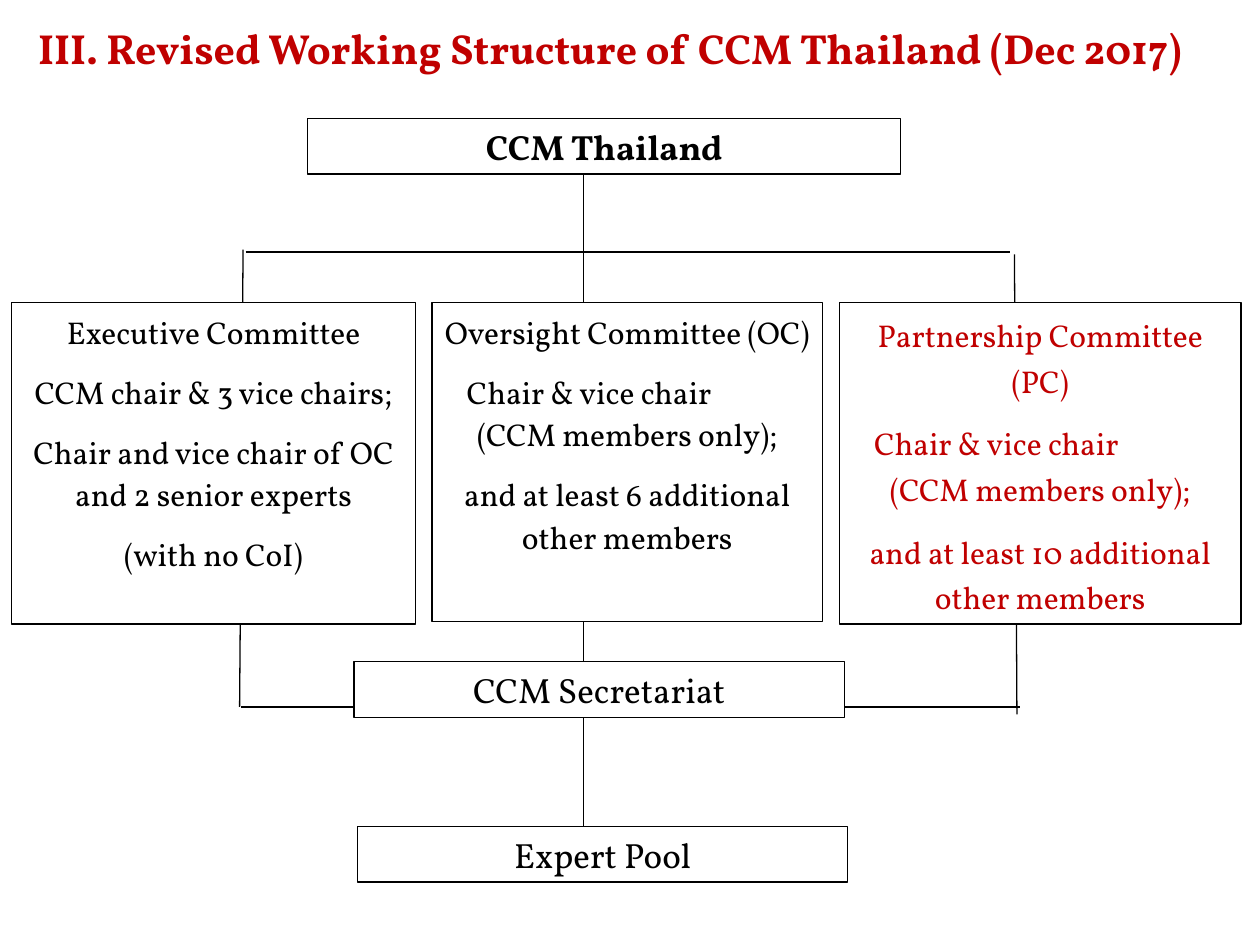
from lxml.etree import SubElement
from pptx import Presentation
from pptx.dml.color import RGBColor
from pptx.enum.shapes import MSO_CONNECTOR as Connector, MSO_SHAPE as Shape
from pptx.enum.text import MSO_ANCHOR as Anchor, MSO_AUTO_SIZE as AutoSize, PP_ALIGN as Align
from pptx.oxml.ns import qn
from pptx.util import Cm, Pt

FONT = "Vollkorn"
BLACK, WHITE, RED = "000000", "FFFFFF", "C00000"
CHAIRS = "Chair & vice chair"
LINES = [
    (4.9, 5.03, 4.83, 14.25),
    (4.85, 14.25, 20.57, 14.25),
    (20.45, 5.13, 20.5, 14.4),
    (11.76, 3.53, 11.76, 17.45),
    (4.95, 5.08, 20.37, 5.08),
]
LABELS = [
    ("CCM Thailand", 6.2, 2.39, 11.96, True),
    ("CCM Secretariat", 7.14, 13.34, 9.88, False),
    ("Expert Pool", 7.21, 16.66, 9.88, False),
]
COMMITTEES = [
    (0.23, 8.15, 6.48, BLACK, 1.12, [
        "Executive Committee",
        "CCM chair & 3 vice chairs;",
        "Chair and vice chair of OC and 2 senior experts",
        "(with no CoI)",
    ]),
    (8.71, 7.87, 6.43, BLACK, 1.12, [
        "Oversight Committee (OC)",
        CHAIRS,
        "(CCM members only);",
        "and at least 6 additional other members",
    ]),
    (16.92, 8.1, 6.48, RED, 1.2, [
        "Partnership Committee (PC)",
        CHAIRS,
        "(CCM members only);",
        "and at least 10 additional other members",
    ]),
]


def color(value):
    return RGBColor.from_string(value)


def format_para(para, size, ink, bold=False):
    para.alignment = Align.CENTER
    for span in para.runs:
        span.font.name = FONT
        span.font.size = Pt(size)
        span.font.bold = bold
        span.font.color.rgb = color(ink)


def add_title(page, text):
    title = page.shapes.title
    title.left, title.top, title.width, title.height = Cm(0.23), Cm(0.33), Cm(24.13), Cm(1.27)
    frame = title.text_frame
    frame.text = text
    frame.auto_size = AutoSize.NONE
    frame.vertical_anchor = Anchor.MIDDLE
    format_para(frame.paragraphs[0], 24, RED, True)


def add_line(page, x1, y1, x2, y2):
    line = page.shapes.add_connector(Connector.STRAIGHT, Cm(x1), Cm(y1), Cm(x2), Cm(y2))
    line.line.color.rgb = color(BLACK)
    line.line.width = Pt(0.75)
    SubElement(line._element.spPr, qn("a:effectLst"))


def add_box(page, left, top, width, height, anchor):
    box = page.shapes.add_shape(Shape.RECTANGLE, Cm(left), Cm(top), Cm(width), Cm(height))
    box.shadow.inherit = False
    box.fill.solid()
    box.fill.fore_color.rgb = color(WHITE)
    box.line.color.rgb = color(BLACK)
    box.line.width = Pt(0.75)
    box.text_frame.word_wrap = True
    box.text_frame.vertical_anchor = anchor
    return box


def add_label(page, text, left, top, width, bold):
    box = add_box(page, left, top, width, 1.12, Anchor.MIDDLE)
    box.text_frame.text = text
    format_para(box.text_frame.paragraphs[0], 20, BLACK, bold)


def add_committee(page, left, width, height, ink, spacing, lines):
    box = add_box(page, left, 6.1, width, height, Anchor.TOP)
    box.text_frame.text = "\n".join(lines)
    for para in box.text_frame.paragraphs:
        format_para(para, 18, ink)
        para.line_spacing = spacing
        para.space_after = Pt(10)
        if para.text == CHAIRS:
            para.alignment = Align.LEFT
            para.space_after = Pt(0)
            para._p.get_or_add_pPr().set("marL", str(Cm(0.45)))


def main():
    deck = Presentation()
    deck.slide_width, deck.slide_height = Cm(25.4), Cm(19.05)
    page = deck.slides.add_slide(deck.slide_layouts[5])
    add_title(page, "III. Revised Working Structure of CCM Thailand (Dec 2017)")
    for line in LINES:
        add_line(page, *line)
    for label in LABELS:
        add_label(page, *label)
    for committee in COMMITTEES:
        add_committee(page, *committee)
    deck.save("out.pptx")


if __name__ == "__main__":
    main()
